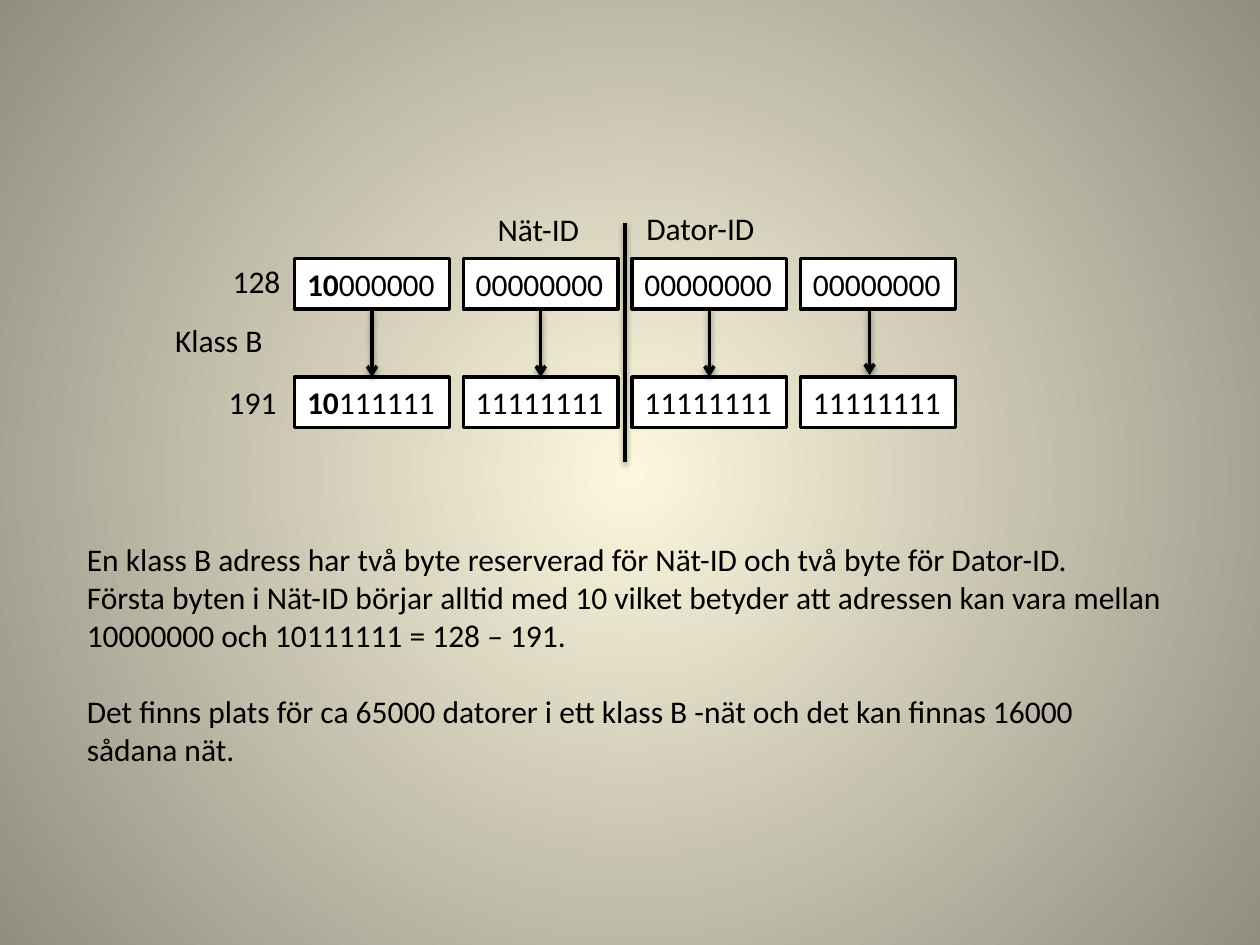
import pptx
import pptx.util
import pptx.oxml
import pptx.oxml.ns
import pptx.dml.color
import pptx.enum.shapes
import pptx.enum.text

Cm = pptx.util.Cm
HUES = {"ink": "000000", "box": "FFFFFF", "glow": "FCF7DD", "edge": "918E81"}
NS = pptx.oxml.ns.nsdecls("a")
ROWS = [("128", ["10000000"] + ["00000000"] * 3),
        ("191", ["10111111"] + ["11111111"] * 3)]
BODY = [
    "En klass B adress har två byte reserverad för Nät-ID och två byte för Dator-ID.",
    "Första byten i Nät-ID börjar alltid med 10 vilket betyder att adressen kan vara mellan",
    "10000000 och 10111111 = 128 – 191.",
    "Det finns plats för ca 65000 datorer i ett klass B -nät och det kan finnas 16000",
    "sådana nät.",
]


def hue(name):
    """Return the named colour."""
    return pptx.dml.color.RGBColor.from_string(HUES[name])


def style(run, bold=False):
    """Set the font of a run."""
    run.font.name = "Calibri"
    run.font.size = pptx.util.Pt(18)
    run.font.bold = bold
    run.font.color.rgb = hue("ink")


def label(slide, text, left, top, width, height=1.02, wrap=False):
    """Add a text box with one paragraph per line of text."""
    shape = slide.shapes.add_textbox(Cm(left), Cm(top), Cm(width), Cm(height))
    frame = shape.text_frame
    frame.text = text
    frame.word_wrap = wrap
    for para in frame.paragraphs:
        for run in para.runs:
            style(run)
    return shape


def byte(slide, bits, fixed, left, top, width, height):
    """Add a box of bits whose fixed leading bits are bold."""
    shape = slide.shapes.add_shape(
        pptx.enum.shapes.MSO_SHAPE.RECTANGLE, Cm(left), Cm(top), Cm(width), Cm(height))
    shape.shadow.inherit = False
    shape.fill.solid()
    shape.fill.fore_color.rgb = hue("box")
    shape.line.color.rgb = hue("ink")
    shape.line.width = pptx.util.Pt(2)
    frame = shape.text_frame
    frame.word_wrap = False
    para = frame.paragraphs[0]
    para.alignment = pptx.enum.text.PP_ALIGN.LEFT
    for part, bold in ((bits[:fixed], True), (bits[fixed:], False)):
        if part:
            run = para.add_run()
            run.text = part
            style(run, bold)
    return shape


def rule(slide, left, top, end, arrow=False):
    """Add a vertical line with a soft shadow and an optional arrowhead."""
    line = slide.shapes.add_connector(
        pptx.enum.shapes.MSO_CONNECTOR.STRAIGHT, Cm(left), Cm(top), Cm(left), Cm(end))
    line.line.color.rgb = hue("ink")
    line.line.width = pptx.util.Pt(2)
    if arrow:
        line.line._get_or_add_ln().append(
            pptx.oxml.parse_xml(f'<a:tailEnd {NS} type="arrow"/>'))
    line._element.spPr.append(pptx.oxml.parse_xml(
        f'<a:effectLst {NS}><a:outerShdw blurRad="40000" dist="20000" dir="5400000" '
        f'rotWithShape="0"><a:srgbClr val="{HUES["ink"]}"><a:alpha val="38000"/>'
        '</a:srgbClr></a:outerShdw></a:effectLst>'))
    return line


def backdrop(slide):
    """Fill the background with a round gradient from the middle."""
    fill = slide.background.fill
    fill.gradient()
    for stop, name in zip(fill.gradient_stops, ("glow", "edge")):
        stop.color.rgb = hue(name)
    grad = slide.element.find(".//" + pptx.oxml.ns.qn("a:gradFill"))
    grad.replace(grad.find(pptx.oxml.ns.qn("a:lin")), pptx.oxml.parse_xml(
        f'<a:path {NS} path="circle"><a:fillToRect l="50000" t="50000" r="50000" b="50000"/></a:path>'))


def diagram(slide, left, top):
    """Draw the first and last address of the class, byte by byte."""
    width, height, step, drop = 3.12, 1.02, 3.4, 2.39
    grid = [[byte(slide, bits, 2 if col == 0 else 0,
                  left + col * step, top + row * drop, width, height)
             for col, bits in enumerate(data)]
            for row, (_, data) in enumerate(ROWS)]
    for first, last in list(zip(*grid))[:3]:
        line = rule(slide, left, top + height, top + drop, True)
        line.begin_connect(first, 2)
        line.end_connect(last, 0)
    rule(slide, left + 11.59, top + height, top + drop - 0.04, True)
    label(slide, ROWS[0][0], left - 1.5, top - 0.05, 1.5)
    label(slide, ROWS[1][0], left - 1.58, top + drop, 1.5)
    label(slide, "Klass B", left - 2.66, top + 1.14, 2.29)
    rule(slide, left + 6.66, top - 0.71, top + 4.11)
    label(slide, "Nät-ID", left + 3.84, top - 1.11, 2.18)
    label(slide, "Dator-ID", left + 6.84, top - 1.12, 2.74)


def prose(slide, left, top, width, height):
    """Write the explanation, with a gap before its second part."""
    shape = label(slide, "\n".join(BODY), left, top, width, height, True)
    shape.text_frame.paragraphs[3].space_before = pptx.util.Pt(22)


def main():
    """Build and save the slide."""
    deck = pptx.Presentation()
    deck.slide_width, deck.slide_height = Cm(25.4), Cm(19.05)
    slide = deck.slides.add_slide(deck.slide_layouts[6])
    backdrop(slide)
    diagram(slide, 5.94, 5.21)
    prose(slide, 1.5, 10.77, 22.45, 5.64)
    deck.save("out.pptx")


if __name__ == "__main__":
    main()
